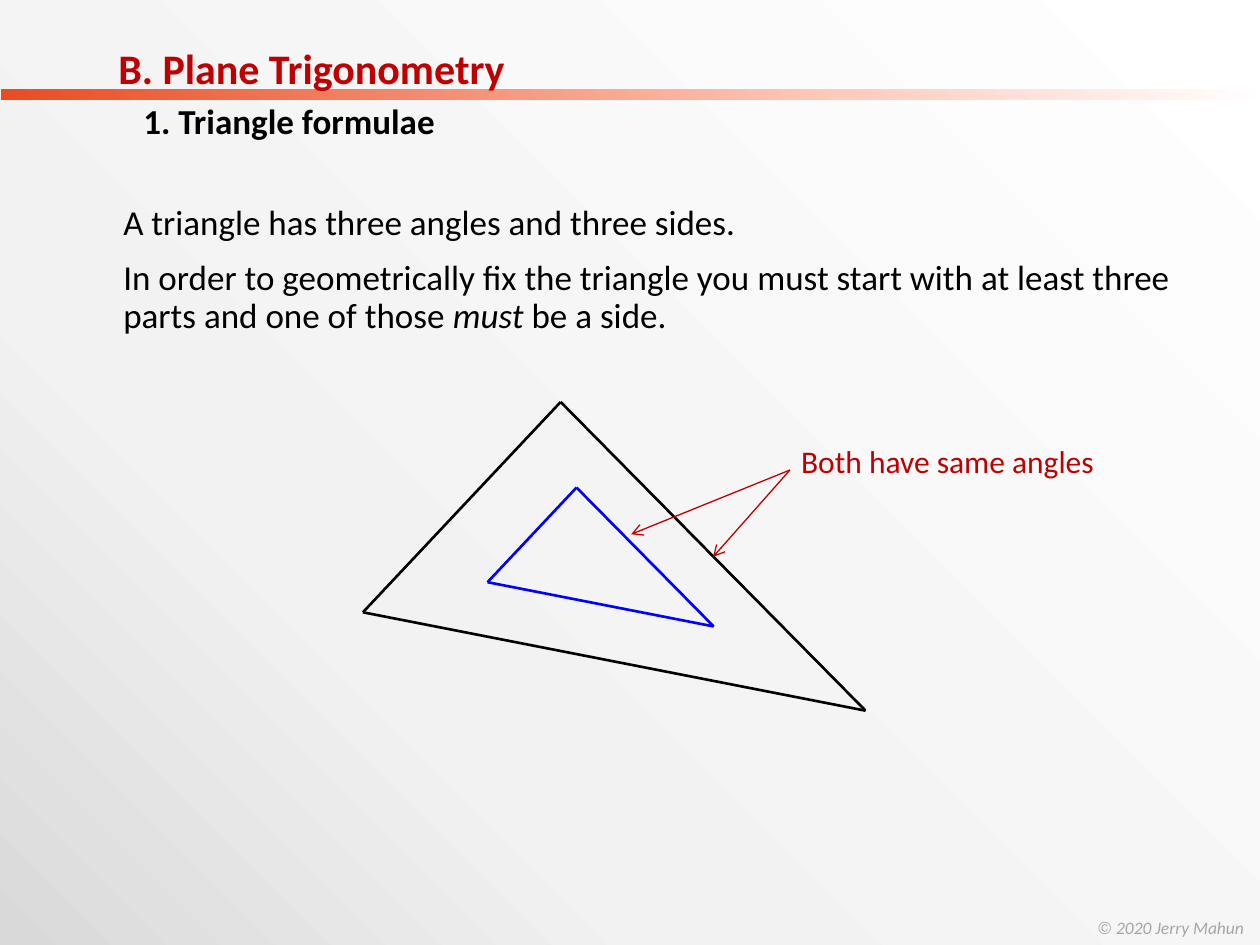
"""Build the plane trigonometry slide with two similar triangles."""
from lxml.etree import SubElement
from pptx import Presentation
from pptx.dml.color import RGBColor
from pptx.enum.shapes import MSO_CONNECTOR as Connector, MSO_SHAPE as Shape
from pptx.oxml.ns import qn
from pptx.util import Pt

RED, BLACK, BLUE, GREY = "C00000", "000000", "0000FF", "A6A6A6"
BACKDROP = [(0, "FFFFFF"), (70, "F2F2F2"), (100, "D9D9D9")]
BAR = [(0, "FFFFFF"), (33, "FFCBBD"), (100, "E84C22")]

HEADING = "B. Plane Trigonometry"
SUBHEADING = "1. Triangle formulae"
BODY = [
    [("A triangle has three angles and three sides.", {})],
    [
        ("In order to geometrically fix the triangle you must start with "
         "at least three parts and one of those ", {}),
        ("must", {"italic": True}),
        (" be a side.", {}),
    ],
]
LABEL = "Both have same angles"
CREDIT = [("© ", {"font": "Arial"}), ("2020 Jerry Mahun", {"italic": True})]

TRIANGLE = [(0, 120.2), (113, 0), (287.2, 176.4)]
TRIANGLES = [
    {"origin": (207.4, 229.7), "scale": 1, "color": BLACK},
    {"origin": (278.6, 278.6), "scale": 0.45, "color": BLUE},
]
ARROW_START = (451.4, 268.6)
ARROW_ENDS = [(360.7, 367.2 - 61.9 + 0.0), (407.5, 318.2)]


def color_of(value):
    """Turn a hex string into a colour."""
    return RGBColor.from_string(value)


def paint_gradient(fill, element, stops):
    """Fill with a gradient that runs down to the left."""
    fill.gradient()
    fill.gradient_angle = 225
    stop_list = element.find(".//" + qn("a:gsLst"))
    for stop in list(stop_list):
        stop_list.remove(stop)
    for position, value in stops:
        stop = SubElement(stop_list, qn("a:gs"), pos=str(position * 1000))
        SubElement(stop, qn("a:srgbClr"), val=value)


def add_box(page, left, top, width, height, wrap=True):
    """Add an empty text box and return its text frame."""
    frame = page.shapes.add_textbox(Pt(left), Pt(top), Pt(width), Pt(height)).text_frame
    frame.word_wrap = wrap
    return frame


def write(para, text, font="Calibri", size=20, color=BLACK, bold=False, italic=False):
    """Append formatted text to a paragraph."""
    span = para.add_run()
    span.text = text
    span.font.name = font
    span.font.size = Pt(size)
    span.font.bold = bold
    span.font.italic = italic
    span.font.color.rgb = color_of(color)


def add_line(shapes, start, end, color, width, arrow=False):
    """Draw a straight line, with an open arrowhead if asked."""
    points = [Pt(value) for value in (*start, *end)]
    line = shapes.add_connector(Connector.STRAIGHT, *points)
    line.line.color.rgb = color_of(color)
    line.line.width = Pt(width)
    if arrow:
        SubElement(line.line._get_or_add_ln(), qn("a:tailEnd"), type="arrow")
    SubElement(line.element.spPr, qn("a:effectLst"))


def add_triangle(page, origin, scale, color):
    """Draw the three sides of a scaled triangle as one group."""
    corners = [(origin[0] + x * scale, origin[1] + y * scale) for x, y in TRIANGLE]
    group = page.shapes.add_group_shape()
    for start, end in zip(corners, corners[1:] + corners[:1]):
        add_line(group.shapes, start, end, color, 1.5)


def add_texts(page):
    """Add the headings and the body text."""
    frame = add_box(page, 63.4, 113.8, 643, 387.4)
    for index, spans in enumerate(BODY):
        para = frame.add_paragraph() if index else frame.paragraphs[0]
        para.line_spacing = 0.9
        para.space_before = Pt(10)
        for text, style in spans:
            write(para, text, **style)

    frame = add_box(page, 60.5, 20.9, 346.3, 85)
    para = frame.paragraphs[0]
    para.space_before = Pt(7.5)
    write(para, HEADING, size=24, color=RED, bold=True)
    para = frame.add_paragraph()
    para.level = 1
    para.space_before = Pt(3.8)
    properties = para._p.get_or_add_pPr()
    properties.set("marL", str(Pt(14.4)))
    properties.set("indent", "0")
    write(para, SUBHEADING, bold=True)


def main():
    """Assemble and save the slide."""
    deck = Presentation()
    deck.slide_width, deck.slide_height = Pt(720), Pt(540)
    page = deck.slides.add_slide(deck.slide_layouts[6])
    paint_gradient(page.background.fill, page.element, BACKDROP)

    credit = add_box(page, 620.6, 520.6, 99.4, 19.4, wrap=False).paragraphs[0]
    for text, style in CREDIT:
        write(credit, text, size=10, color=GREY, **style)

    bar = page.shapes.add_shape(Shape.RECTANGLE, Pt(0.7), Pt(51.1), Pt(720), Pt(5.8))
    bar.shadow.inherit = False
    bar.line.fill.background()
    paint_gradient(bar.fill, bar.element, BAR)

    for triangle in TRIANGLES:
        add_triangle(page, **triangle)
    label = add_box(page, 450.7, 249.1, 221.8, 28.8)
    write(label.paragraphs[0], LABEL, size=18, color=RED)
    for end in ARROW_ENDS:
        add_line(page.shapes, ARROW_START, end, RED, 0.75, arrow=True)
    add_texts(page)
    deck.save("out.pptx")


if __name__ == "__main__":
    main()
